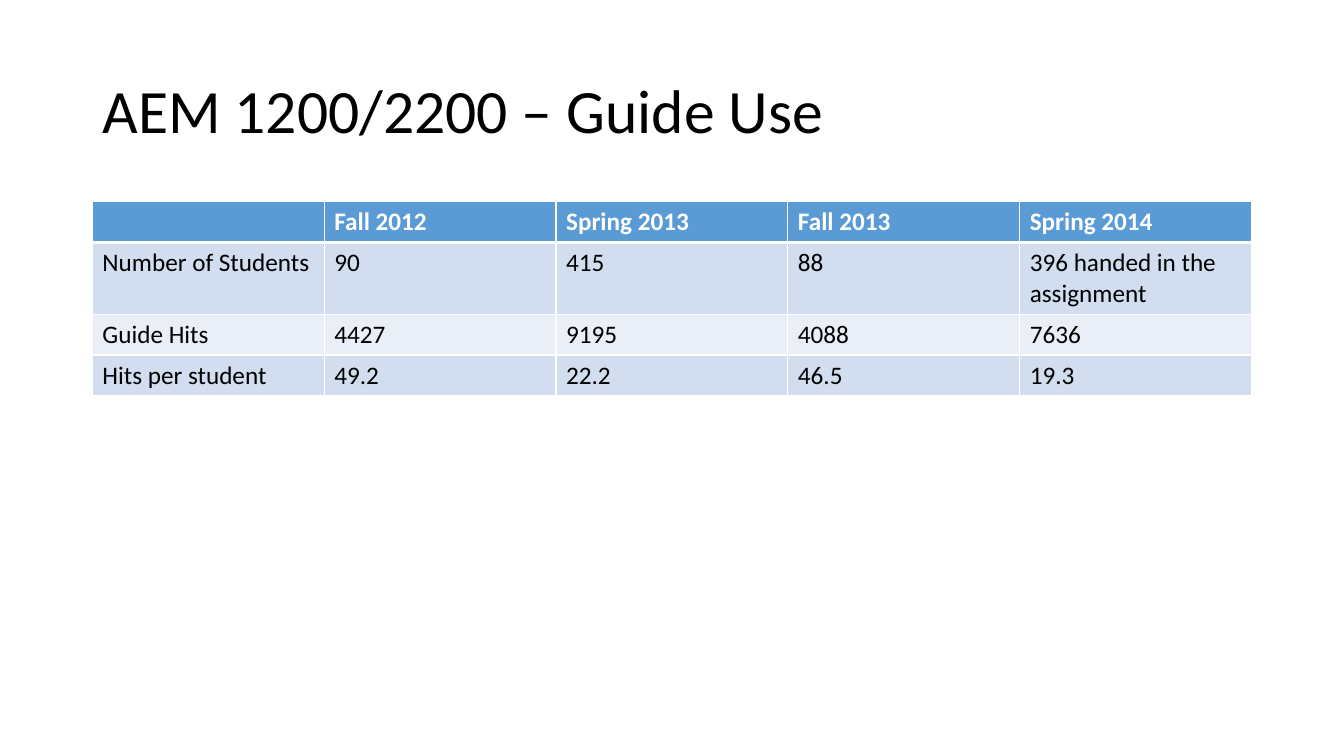
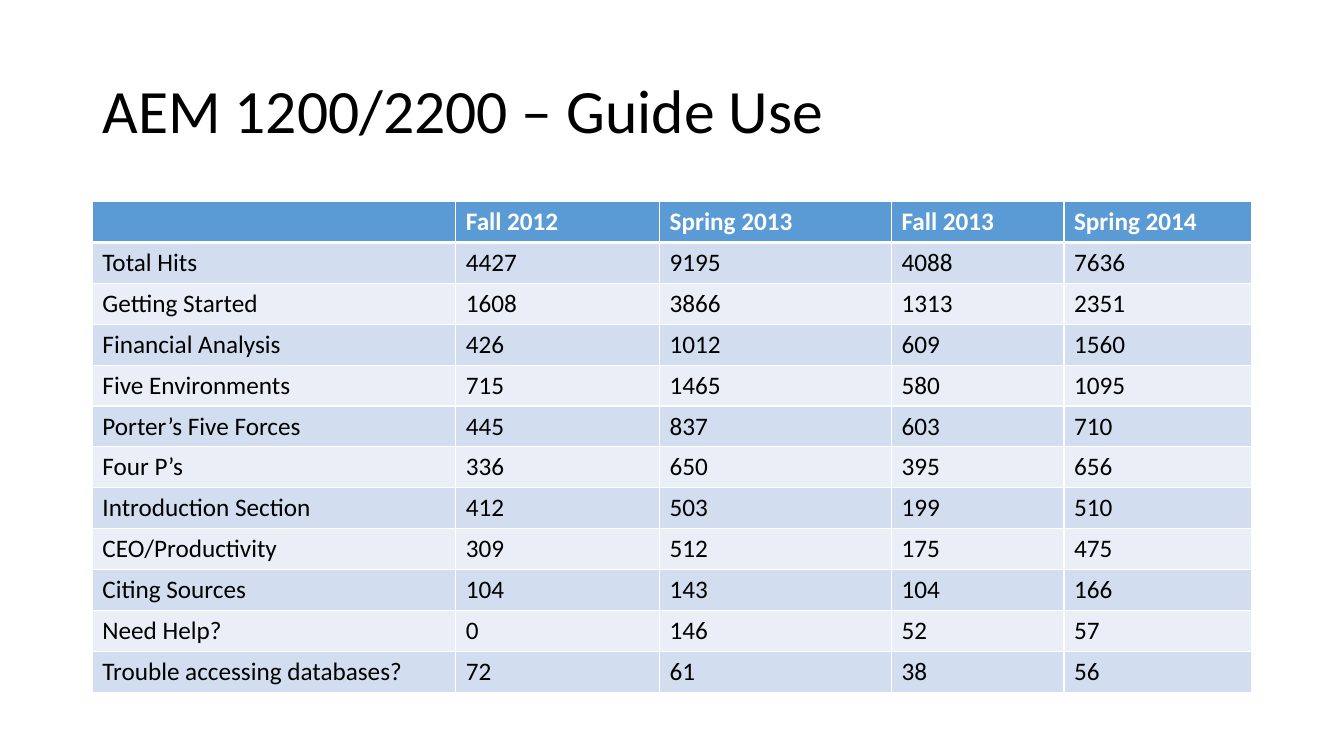
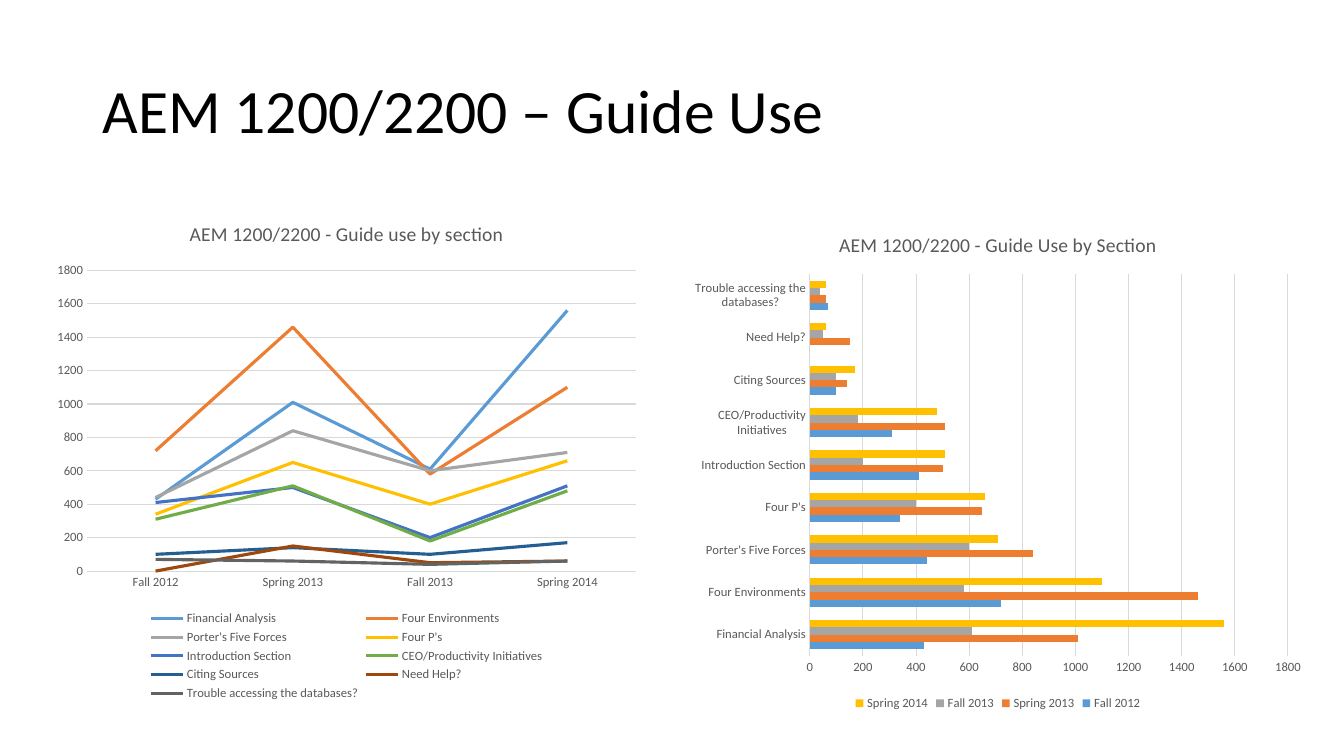
from pptx import Presentation
from pptx.chart.data import CategoryChartData
from pptx.dml.color import RGBColor
from pptx.enum.chart import XL_CHART_TYPE as ChartType
from pptx.enum.chart import XL_LEGEND_POSITION as LegendPosition
from pptx.enum.chart import XL_MARKER_STYLE as MarkerStyle
from pptx.enum.chart import XL_TICK_MARK as TickMark
from pptx.enum.text import MSO_ANCHOR as Anchor
from pptx.enum.text import PP_ALIGN as Align
from pptx.oxml import parse_xml
from pptx.oxml.ns import nsdecls
from pptx.util import Pt

# Colours
BLACK = RGBColor(0x00, 0x00, 0x00)
WHITE = RGBColor(0xFF, 0xFF, 0xFF)
GREY_TEXT = RGBColor(0x59, 0x59, 0x59)
GRID = RGBColor(0xD9, 0xD9, 0xD9)
HEADER = RGBColor(0x5B, 0x9B, 0xD5)
BAND_DARK = RGBColor(0xD2, 0xDE, 0xEF)
BAND_LIGHT = RGBColor(0xEA, 0xEF, 0xF7)
SERIES_COLORS = [
    HEADER,
    RGBColor(0xED, 0x7D, 0x31),
    RGBColor(0xA5, 0xA5, 0xA5),
    RGBColor(0xFF, 0xC0, 0x00),
    RGBColor(0x44, 0x72, 0xC4),
    RGBColor(0x70, 0xAD, 0x47),
    RGBColor(0x25, 0x5E, 0x91),
    RGBColor(0x9E, 0x48, 0x0E),
    RGBColor(0x63, 0x63, 0x63),
]

# Text formats
TITLE_FORMAT = {"name": "Calibri", "size": Pt(44), "bold": False}
HEADER_FORMAT = {"name": "Calibri", "size": Pt(18), "bold": True}
CELL_FORMAT = {"name": "Calibri", "size": Pt(18), "bold": False}
CHART_FORMAT = {"name": "Calibri", "size": Pt(10)}
CHART_TITLE_FORMAT = {"name": "Calibri", "size": Pt(14), "bold": False}
LABEL_FORMAT = {"name": "Calibri", "size": Pt(9), "bold": False}

# Content
TITLE = "AEM 1200/2200 – Guide Use"
TERMS = ["Fall 2012", "Spring 2013", "Fall 2013", "Spring 2014"]
STUDENT_ROWS = [
    ["Number of Students", 90, 415, 88, "396 handed in the assignment"],
    ["Guide Hits", 4427, 9195, 4088, 7636],
    ["Hits per student", 49.2, 22.2, 46.5, 19.3],
]
TOTAL_ROWS = [
    ["Total Hits", 4427, 9195, 4088, 7636],
    ["Getting Started", 1608, 3866, 1313, 2351],
]
SECTION_ROWS = [
    ["Financial Analysis", 426, 1012, 609, 1560],
    ["Five Environments", 715, 1465, 580, 1095],
    ["Porter’s Five Forces", 445, 837, 603, 710],
    ["Four P’s", 336, 650, 395, 656],
    ["Introduction Section", 412, 503, 199, 510],
    ["CEO/Productivity", 309, 512, 175, 475],
    ["Citing Sources", 104, 143, 104, 166],
    ["Need Help?", 0, 146, 52, 57],
    ["Trouble accessing databases?", 72, 61, 38, 56],
]
CHART_SECTIONS = [
    "Financial Analysis",
    "Four Environments",
    "Porter's Five Forces",
    "Four P's",
    "Introduction Section",
    "CEO/Productivity Initiatives",
    "Citing Sources",
    "Need Help?",
    "Trouble accessing the databases?",
]


def set_font(font, values, color):
    for attribute, value in values.items():
        setattr(font, attribute, value)
    font.color.rgb = color


class Deck:
    """Holds the shared style and the current slide."""

    LEFT, CONTENT_TOP, WIDTH = Pt(66), Pt(144), Pt(828)
    ROW_HEIGHT = Pt(29.2)

    def __init__(self):
        self.presentation = Presentation()
        self.presentation.slide_width = Pt(960)
        self.presentation.slide_height = Pt(540)
        self.slide = None

    def add_slide(self, title):
        layout = self.presentation.slide_layouts[5]
        self.slide = self.presentation.slides.add_slide(layout)
        shape = self.slide.shapes.title
        place = {"left": self.LEFT, "top": Pt(28.75),
                 "width": self.WIDTH, "height": Pt(104.4)}
        for attribute, value in place.items():
            setattr(shape, attribute, value)
        shape.text_frame.text = title
        shape.text_frame.vertical_anchor = Anchor.MIDDLE
        paragraph = shape.text_frame.paragraphs[0]
        paragraph.alignment = Align.LEFT
        paragraph.line_spacing = 0.9
        set_font(paragraph.runs[0].font, TITLE_FORMAT, BLACK)

    def set_borders(self, cell, top, bottom):
        properties = cell._tc.get_or_add_tcPr()
        widths = {"lnL": 1, "lnR": 1, "lnT": top, "lnB": bottom}
        for position, (tag, width) in enumerate(widths.items()):
            properties.insert(position, parse_xml(
                f'<a:{tag} {nsdecls("a")} w="{Pt(width)}"><a:solidFill>'
                f'<a:srgbClr val="{WHITE}"/></a:solidFill></a:{tag}>'))

    def add_table(self, rows, column_widths):
        rows = [["", *TERMS], *rows]
        table = self.slide.shapes.add_table(
            len(rows), len(column_widths), self.LEFT, self.CONTENT_TOP,
            self.WIDTH, self.ROW_HEIGHT * len(rows)).table
        for column, width in zip(table.columns, column_widths):
            column.width = Pt(width)
        for row_index, values in enumerate(rows):
            table.rows[row_index].height = self.ROW_HEIGHT
            is_header = row_index == 0
            band = BAND_DARK if row_index % 2 else BAND_LIGHT
            for column_index, value in enumerate(values):
                cell = table.cell(row_index, column_index)
                cell.text = str(value)
                cell.fill.solid()
                cell.fill.fore_color.rgb = HEADER if is_header else band
                self.set_borders(cell, top=3 if row_index == 1 else 1,
                                 bottom=3 if is_header else 1)
                set_font(cell.text_frame.paragraphs[0].font,
                         HEADER_FORMAT if is_header else CELL_FORMAT,
                         WHITE if is_header else BLACK)

    def add_chart(self, kind, title, categories, series, left, top, width, height):
        data = CategoryChartData()
        data.categories = categories
        for name, values in series:
            data.add_series(name, values)
        chart = self.slide.shapes.add_chart(
            kind, Pt(left), Pt(top), Pt(width), Pt(height), data).chart
        set_font(chart.font, CHART_FORMAT, BLACK)

        # Title and legend
        chart.has_title = True
        chart.chart_title.text_frame.text = title
        set_font(chart.chart_title.text_frame.paragraphs[0].runs[0].font,
                 CHART_TITLE_FORMAT, GREY_TEXT)
        chart.has_legend = True
        chart.legend.position = LegendPosition.BOTTOM
        chart.legend.include_in_layout = False
        set_font(chart.legend.font, LABEL_FORMAT, GREY_TEXT)

        # Axes and grid
        for axis in (chart.category_axis, chart.value_axis):
            axis.major_tick_mark = axis.minor_tick_mark = TickMark.NONE
            set_font(axis.tick_labels.font, LABEL_FORMAT, GREY_TEXT)
        chart.value_axis.has_major_gridlines = True
        chart.value_axis.format.line.fill.background()
        for line in (chart.category_axis.format.line,
                     chart.value_axis.major_gridlines.format.line):
            line.color.rgb = GRID
            line.width = Pt(0.75)

        # Series
        plot = chart.plots[0]
        plot.vary_by_categories = False
        for item, color in zip(plot.series, SERIES_COLORS):
            if kind == ChartType.LINE:
                item.smooth = False
                item.marker.style = MarkerStyle.NONE
                item.format.line.color.rgb = color
                item.format.line.width = Pt(2.25)
            else:
                item.format.fill.solid()
                item.format.fill.fore_color.rgb = color
        return chart


def main():
    deck = Deck()

    # Hits per student
    deck.add_slide(TITLE)
    deck.add_table(STUDENT_ROWS, [165.6] * 5)

    # Hits by section
    deck.add_slide(TITLE)
    deck.add_table(TOTAL_ROWS + SECTION_ROWS, [259.6, 145.6, 165.6, 123.2, 134])

    # Charts show the section hits rounded to tens
    deck.add_slide(TITLE)
    hits = [[round(value, -1) for value in row[1:]] for row in SECTION_ROWS]
    deck.add_chart(ChartType.LINE, "AEM 1200/2200 - Guide use by section",
                   TERMS, zip(CHART_SECTIONS, hits), 32.4, 144, 430.5, 359.3)
    bar_chart = deck.add_chart(
        ChartType.BAR_CLUSTERED, "AEM 1200/2200 - Guide Use by Section",
        CHART_SECTIONS, zip(TERMS, zip(*hits)), 487.5, 152, 450.7, 358.5)
    bar_chart.plots[0].gap_width = 182

    deck.presentation.save("out.pptx")


if __name__ == "__main__":
    main()
